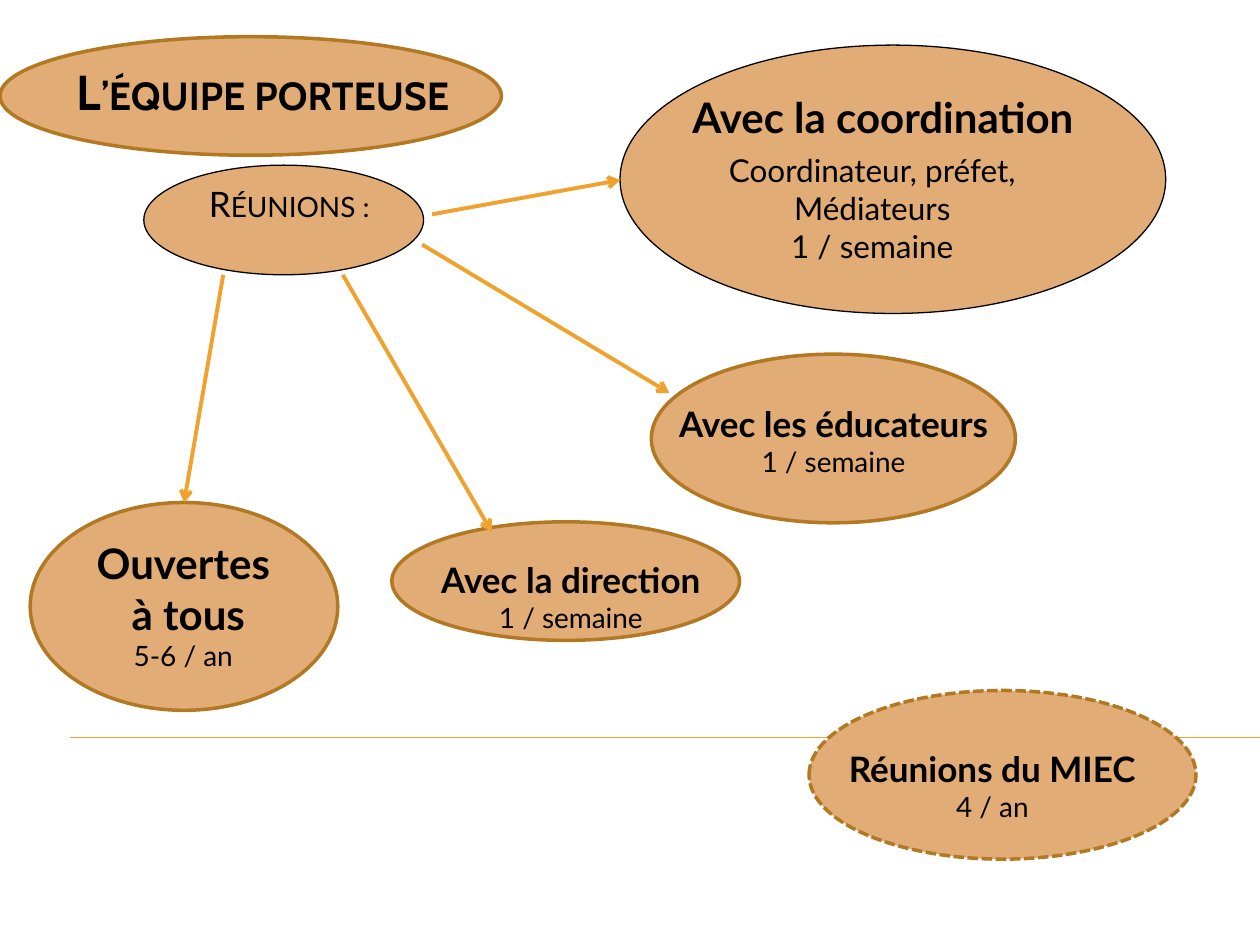
from lxml import etree
from pptx import Presentation
from pptx import util as u
from pptx.dml.color import RGBColor
from pptx.enum import dml, shapes, text
from pptx.oxml.ns import qn

SAND, BROWN, ORANGE, BLACK = "E2AC76", "B27822", "F0A22E", "000000"
SOLID, DASHED = dml.MSO_LINE.SOLID, dml.MSO_LINE.SQUARE_DOT

RULE = ((1.42, 14.86), (25.4, 14.86))

EDUCATORS = {
    "oval": (13.13, 7.14, 7.34, 3.4), "line": (BROWN, 2, SOLID),
    "texts": [((12.5, 7.98, 8.61, 1.8),
               [("Avec les éducateurs", 20, True), ("1 / semaine", 16, False)])],
}
OPEN_TO_ALL = {
    "oval": (0.61, 10.13, 6.2, 4.19), "line": (BROWN, 2, SOLID),
    "texts": [((0, 10.72, 7.39, 3),
               [("Ouvertes", 24, True), (" à tous", 24, True), ("5-6 / an", 16, False)])],
}
MEETINGS = {
    "oval": (2.9, 3.33, 5.64, 2.21), "line": (BLACK, 0.75, SOLID), "small_caps": True,
    "texts": [((3.02, 3.56, 5.77, 0.51), [("Réunions : ", 20, False)])],
}
COORDINATION = {
    "oval": (12.5, 0.91, 11, 5.41), "line": (BLACK, 0.75, SOLID),
    "texts": [((12.9, 1.73, 9.8, 1.27), [("Avec la coordination", 24, True)]),
              ((13.89, 2.92, 7.39, 2.57),
               [("Coordinateur, préfet,", 18, False), ("Médiateurs", 18, False),
                ("1 / semaine", 18, False)])],
}
MANAGEMENT = {
    "oval": (7.9, 10.52, 7.01, 2.39), "line": (BROWN, 2, SOLID), "wrap": False,
    "texts": [((8.41, 11.13, 6.2, 1.8),
               [("Avec la direction", 20, True), ("1 / semaine", 16, False)])],
}
NETWORK = {
    "oval": (16.31, 13.92, 7.8, 3.4), "line": (BROWN, 2, DASHED),
    "texts": [((16.31, 14.94, 7.39, 1.8),
               [("Réunions du MIEC", 20, True), ("4 / an", 16, False)])],
}
TITLE = {
    "oval": (0, 0.74, 10.11, 2.39), "line": (BROWN, 2, SOLID),
    "small_caps": True, "font": "Cabin",
    "texts": [((0.71, 1.12, 9.19, 1.45), [("L’équipe porteuse", 28, True)])],
}
BUBBLES = [EDUCATORS, OPEN_TO_ALL, MEETINGS, COORDINATION, MANAGEMENT, NETWORK]

ARROWS = [
    ((4.5, 5.54), (3.71, 10.13)),
    ((6.91, 5.54), (9.91, 10.72)),
    ((8.51, 4.93), (13.49, 7.92)),
    ((8.71, 4.32), (12.5, 3.63)),
]


def color(value):
    return RGBColor.from_string(value)


def lengths(values):
    return [u.Cm(value) for value in values]


def add_line(slide, start, end, width, arrow=False):
    connector = slide.shapes.add_connector(
        shapes.MSO_CONNECTOR.STRAIGHT, *lengths(start + end))
    connector.line.color.rgb = color(ORANGE)
    connector.line.width = u.Pt(width)
    if arrow:
        etree.SubElement(connector.line._get_or_add_ln(), qn("a:tailEnd"), type="arrow")
    etree.SubElement(connector._element.spPr, qn("a:effectLst"))


def add_text(group, box, lines, font, small_caps, wrap):
    frame = group.shapes.add_textbox(*lengths(box)).text_frame
    frame.word_wrap = wrap
    for index, (words, size, bold) in enumerate(lines):
        paragraph = frame.add_paragraph() if index else frame.paragraphs[0]
        paragraph.alignment = text.PP_ALIGN.CENTER
        run = paragraph.add_run()
        run.text = words
        run.font.name = font
        run.font.size = u.Pt(size)
        run.font.bold = bold
        run.font.color.rgb = color(BLACK)
        if small_caps:
            run.font._element.set("cap", "small")


def add_bubble(slide, bubble):
    group = slide.shapes.add_group_shape()
    oval = group.shapes.add_shape(shapes.MSO_SHAPE.OVAL, *lengths(bubble["oval"]))
    oval.shadow.inherit = False
    oval.fill.solid()
    oval.fill.fore_color.rgb = color(SAND)
    line_color, width, dash = bubble["line"]
    oval.line.color.rgb = color(line_color)
    oval.line.width = u.Pt(width)
    oval.line.dash_style = dash
    for box, lines in bubble["texts"]:
        add_text(group, box, lines, bubble.get("font", "Lato"),
                 bubble.get("small_caps", False), bubble.get("wrap", True))


def main():
    presentation = Presentation()
    presentation.slide_width, presentation.slide_height = lengths((25.4, 19.05))
    slide = presentation.slides.add_slide(presentation.slide_layouts[6])
    add_line(slide, *RULE, 0.75)
    for bubble in BUBBLES:
        add_bubble(slide, bubble)
    for start, end in ARROWS:
        add_line(slide, start, end, 2.25, arrow=True)
    add_bubble(slide, TITLE)
    presentation.save("out.pptx")


if __name__ == "__main__":
    main()
